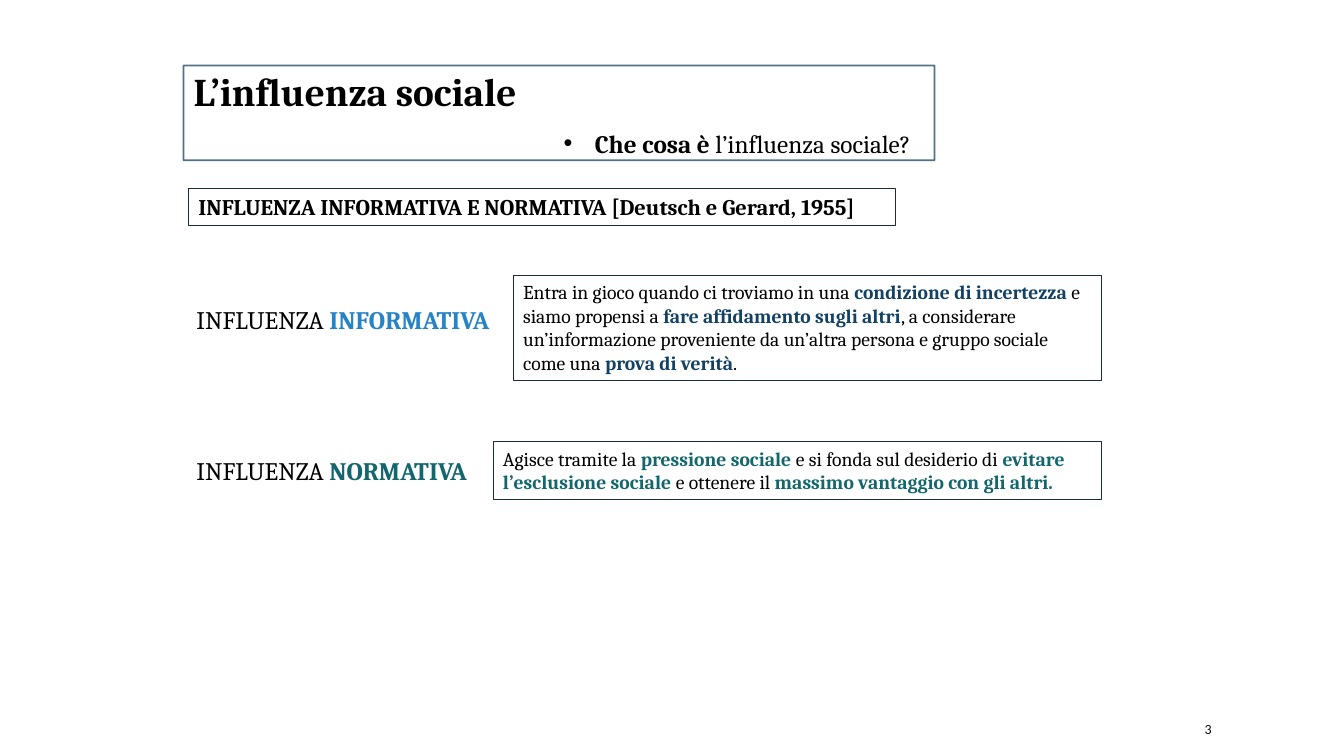
"""Build the slide on informative and normative social influence."""
from dataclasses import dataclass

from lxml import etree
from pptx import Presentation
from pptx.dml.color import RGBColor
from pptx.enum.shapes import MSO_SHAPE
from pptx.enum.text import MSO_ANCHOR, MSO_AUTO_SIZE, PP_ALIGN
from pptx.oxml.ns import qn
from pptx.util import Inches, Pt

RECT = MSO_SHAPE.RECTANGLE
TOP, MIDDLE = MSO_ANCHOR.TOP, MSO_ANCHOR.MIDDLE
NO_FIT = MSO_AUTO_SIZE.NONE
LEFT = PP_ALIGN.LEFT


@dataclass(frozen=True)
class Theme:
    """Colours, fonts and type sizes of the slide."""
    font: str = "Cambria"
    number_font: str = "Calibri"
    text: str = "000000"
    number: str = "0D0D0D"
    white: str = "FFFFFF"
    frame: str = "335B74"
    border: str = "1A2D3A"
    blue: str = "2683C6"
    navy: str = "134163"
    teal: str = "13676C"
    title_size: int = 28
    label_size: int = 18
    heading_size: int = 16
    body_size: int = 14
    number_size: int = 10


T = Theme()


def place(sp, left, top, width, height):
    """Set a shape's position and size in inches."""
    sp.left, sp.top = Inches(left), Inches(top)
    sp.width, sp.height = Inches(width), Inches(height)


def write(sp, runs, size, accent=T.text, anchor=TOP, font=T.font, color=T.text):
    """Write (text, bold) runs, with bold ones in the accent colour."""
    tf = sp.text_frame
    tf.word_wrap = True
    tf.auto_size = NO_FIT
    tf.vertical_anchor = anchor
    p = tf.paragraphs[0]
    p.alignment = LEFT
    for text, bold in runs:
        r = p.add_run()
        r.text = text
        r.font.name = font
        r.font.size = Pt(size)
        r.font.bold = bold
        r.font.color.rgb = RGBColor.from_string(accent if bold else color)
    return p


def add_text(slide, box, runs, size, **style):
    """Add a text box."""
    sp = slide.shapes.add_textbox(*map(Inches, box))
    write(sp, runs, size, **style)


def outline(sp, color, width):
    """Give a shape a solid outline."""
    sp.line.color.rgb = RGBColor.from_string(color)
    sp.line.width = Pt(width)


def add_box(slide, box, runs, size, line_width, accent=T.text, fill=None):
    """Add an outlined rectangle with text."""
    sp = slide.shapes.add_shape(RECT, *map(Inches, box))
    sp.shadow.inherit = False
    if fill:
        sp.fill.solid()
        sp.fill.fore_color.rgb = RGBColor.from_string(fill)
    else:
        sp.fill.background()
    outline(sp, T.border, line_width)
    write(sp, runs, size, accent)


def set_title(slide):
    """Fill and frame the title placeholder."""
    sp = slide.shapes.title
    place(sp, 1.82, 0.65, 7.45, 0.94)
    write(sp, [("L’influenza sociale", True)], T.title_size)
    sp.text_frame.margin_top = Inches(0.02)
    outline(sp, T.frame, 1.25)
    color = sp.line._get_or_add_ln().find(".//" + qn("a:srgbClr"))
    etree.SubElement(color, qn("a:alpha")).set("val", "86000")


def set_question(slide):
    """Fill the body placeholder with the bulleted question."""
    sp = slide.placeholders[1]
    place(sp, 5.49, 1.07, 3.78, 0.56)
    p = write(sp, [("Che cosa è ", True), ("l’influenza sociale?", False)], T.label_size)
    p.line_spacing = 1.5
    p.space_before = Pt(0)
    pPr = p._p.get_or_add_pPr()
    pPr.set("marL", str(Inches(0.31)))
    pPr.set("indent", str(Inches(-0.31)))
    etree.SubElement(pPr, qn("a:buFont")).set("typeface", "Arial")
    etree.SubElement(pPr, qn("a:buChar")).set("char", "•")


def add_influence(slide, name, label_box, label_color, text_box, runs, accent):
    """Add a kind of influence: its label and its description."""
    add_text(slide, label_box, [("INFLUENZA ", False), (name, True)],
             T.label_size, accent=label_color)
    add_box(slide, text_box, runs, T.body_size, 0.25, accent)


def main():
    """Build and save the slide."""
    prs = Presentation()
    prs.slide_width, prs.slide_height = Inches(13.33), Inches(7.5)
    slide = prs.slides.add_slide(prs.slide_layouts[1])
    set_title(slide)
    set_question(slide)
    add_box(slide, (1.87, 1.87, 7.01, 0.37),
            [("INFLUENZA INFORMATIVA E NORMATIVA [Deutsch e Gerard, 1955]", True)],
            T.heading_size, 0.75, fill=T.white)
    add_influence(
        slide, "INFORMATIVA", (1.85, 2.97, 3.43, 0.4), T.blue,
        (5.09, 2.73, 5.83, 1.04),
        [("Entra in gioco quando ci troviamo in una ", False),
         ("condizione di incertezza ", True),
         ("e siamo propensi a ", False),
         ("fare affidamento sugli altri", True),
         (", a considerare un’informazione proveniente da un’altra persona "
          "e gruppo sociale come una ", False),
         ("prova di verità", True),
         (".", False)], T.navy)
    add_influence(
        slide, "NORMATIVA", (1.85, 4.47, 3.04, 0.4), T.teal,
        (4.89, 4.38, 6.03, 0.57),
        [("Agisce tramite la ", False),
         ("pressione sociale ", True),
         ("e si fonda sul desiderio di ", False),
         ("evitare l’esclusione sociale ", True),
         ("e ottenere il ", False),
         ("massimo vantaggio con gli altri.", True)], T.teal)
    add_text(slide, (11.85, 7.08, 1.06, 0.3), [("3", False)], T.number_size,
             anchor=MIDDLE, font=T.number_font, color=T.number)
    prs.save("out.pptx")


if __name__ == "__main__":
    main()
